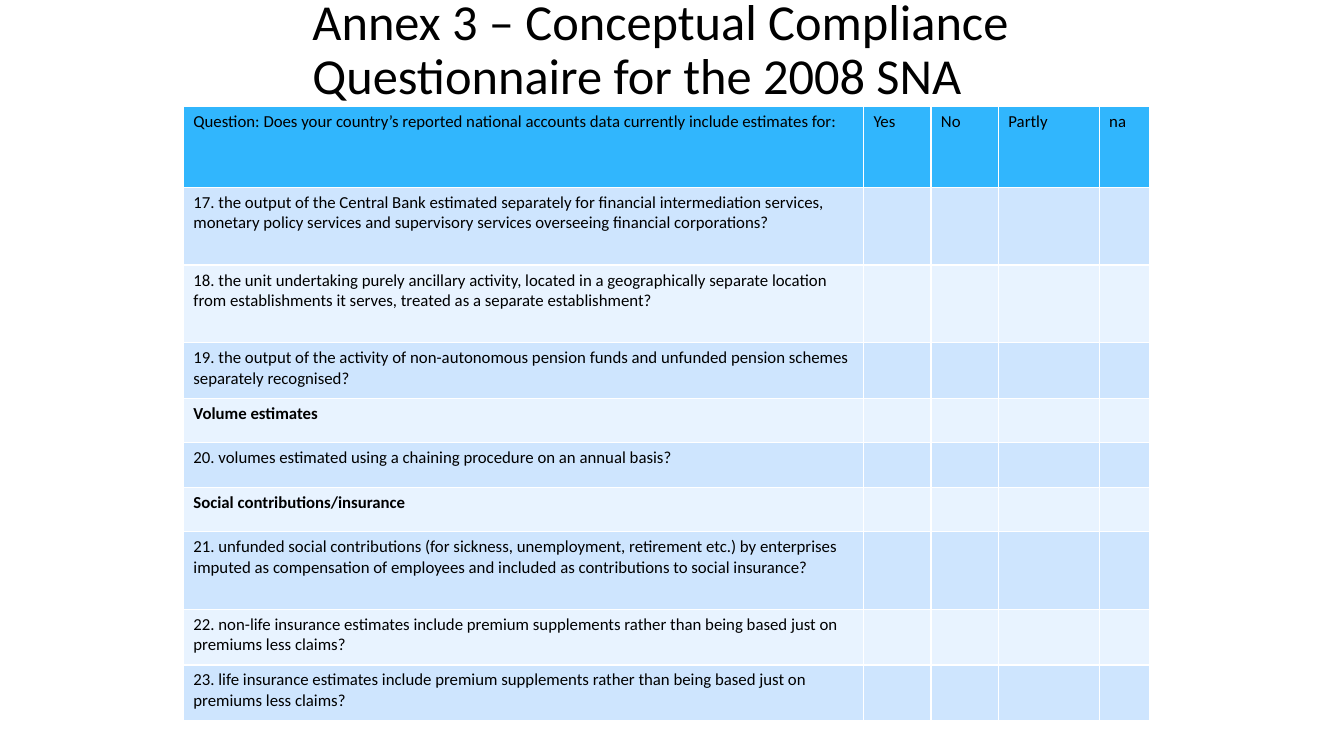
from dataclasses import dataclass

import pptx
import pptx.dml.color
import pptx.enum.text
import pptx.util

Cm = pptx.util.Cm


@dataclass(frozen=True)
class Theme:
    font: str = "Calibri"
    title_size: int = 36
    body_size: int = 12
    ink: str = "000000"
    header: str = "31B6FD"
    bands: tuple = ("CEE5FE", "E8F3FF")


THEME = Theme()

TITLE = "Annex 3 – Conceptual Compliance Questionnaire for the 2008 SNA"
HEADINGS = [
    "Question: Does your country’s reported national accounts data currently include estimates for:",
    "Yes", "No", "Partly", "na",
]
ANSWER_WIDTHS = [1.7, 1.7, 2.54, 1.27]
HEADER_HEIGHT = 2.03
TALL, MEDIUM, SHORT = 1.96, 1.4, 1.12

# Text, row height, whether it is a section heading
QUESTIONS = [
    ("17. the output of the Central Bank estimated separately for financial intermediation services, "
     "monetary policy services and supervisory services overseeing financial corporations?", TALL, False),
    ("18. the unit undertaking purely ancillary activity, located in a geographically separate location "
     "from establishments it serves, treated as a separate establishment?", TALL, False),
    ("19. the output of the activity of non-autonomous pension funds and unfunded pension schemes "
     "separately recognised?", MEDIUM, False),
    ("Volume estimates", SHORT, True),
    ("20. volumes estimated using a chaining procedure on an annual basis?", SHORT, False),
    ("Social contributions/insurance", SHORT, True),
    ("21. unfunded social contributions (for sickness, unemployment, retirement etc.) by enterprises "
     "imputed as compensation of employees and included as contributions to social insurance?", TALL, False),
    ("22. non-life insurance estimates include premium supplements rather than being based just on "
     "premiums less claims?", MEDIUM, False),
    ("23. life insurance estimates include premium supplements rather than being based just on "
     "premiums less claims?", MEDIUM, False),
]


def write(frame, text, size=THEME.body_size, bold=False, color=THEME.ink, spacing=None):
    paragraph = frame.paragraphs[0]
    paragraph.alignment = pptx.enum.text.PP_ALIGN.LEFT
    paragraph.line_spacing = spacing
    run = paragraph.add_run()
    run.text = text
    run.font.name = THEME.font
    run.font.size = pptx.util.Pt(size)
    run.font.bold = bold
    run.font.color.rgb = pptx.dml.color.RGBColor.from_string(color)


def place_title(slide, left, top, width, height):
    title = slide.shapes.title
    title.left, title.top, title.width, title.height = Cm(left), Cm(top), Cm(width), Cm(height)
    frame = title.text_frame
    frame.word_wrap = True
    frame.auto_size = pptx.enum.text.MSO_AUTO_SIZE.NONE
    frame.vertical_anchor = pptx.enum.text.MSO_ANCHOR.MIDDLE
    write(frame, TITLE, size=THEME.title_size, spacing=0.9)


def fill_row(row, texts, color, bold=False):
    for cell, text in zip(row.cells, texts):
        cell.fill.solid()
        cell.fill.fore_color.rgb = pptx.dml.color.RGBColor.from_string(color)
        if text:
            write(cell.text_frame, text, bold=bold)


def place_questionnaire(slide, left, top, width, height):
    questionnaire = slide.shapes.add_table(
        len(QUESTIONS) + 1, len(HEADINGS), Cm(left), Cm(top), Cm(width), Cm(height)).table

    # The question column takes what the answer columns leave
    widths = [width - sum(ANSWER_WIDTHS)] + ANSWER_WIDTHS
    for column, column_width in zip(questionnaire.columns, widths):
        column.width = Cm(column_width)

    # Header
    header = questionnaire.rows[0]
    header.height = Cm(HEADER_HEIGHT)
    fill_row(header, HEADINGS, THEME.header)

    # Questions on alternating bands, with blank answer cells
    for index, (question, row_height, is_section) in enumerate(QUESTIONS):
        row = questionnaire.rows[index + 1]
        row.height = Cm(row_height)
        answers = [""] * len(ANSWER_WIDTHS)
        fill_row(row, [question] + answers, THEME.bands[index % 2], bold=is_section)


def main():
    deck = pptx.Presentation()
    deck.slide_width, deck.slide_height = Cm(33.87), Cm(19.05)
    slide = deck.slides.add_slide(deck.slide_layouts.get_by_name("Title Only"))
    place_title(slide, left=7.62, top=0.4, width=20.45, height=1.78)
    place_questionnaire(slide, left=4.62, top=2.69, width=24.35, height=15.47)
    deck.save("out.pptx")


if __name__ == "__main__":
    main()
